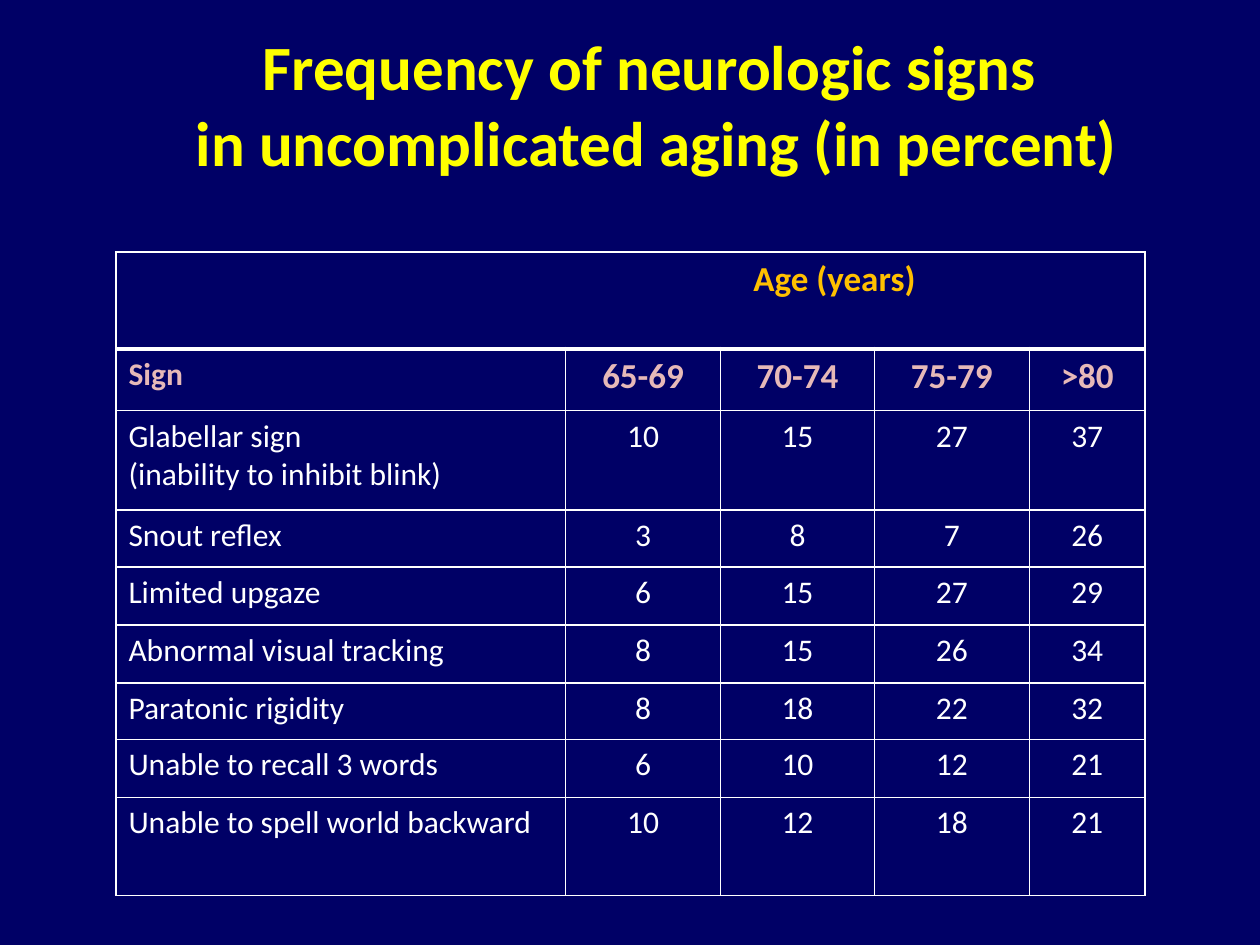
from lxml.etree import SubElement
from pptx import Presentation
from pptx.dml.color import RGBColor
from pptx.enum.text import PP_ALIGN as Align
from pptx.oxml.ns import qn
from pptx.util import Inches, Pt

NAVY = RGBColor(0x00, 0x00, 0x66)
YELLOW = RGBColor(0xFF, 0xFF, 0x00)
GOLD = RGBColor(0xFF, 0xC0, 0x00)
PINK = RGBColor(0xE6, 0xB9, 0xB8)
WHITE = RGBColor(0xFF, 0xFF, 0xFF)

TITLE = ["Frequency of neurologic signs ", "in uncomplicated aging (in percent)"]
TITLE_FORMAT = {"size": Pt(36), "bold": True, "color": YELLOW}
AGE_FORMAT = {"size": Pt(20), "bold": True, "color": GOLD}
SIGN_FORMAT = {"size": Pt(18), "bold": True, "color": PINK}
RANGE_FORMAT = {"size": Pt(20), "bold": True, "color": PINK}
BODY_FORMAT = {"size": Pt(18), "bold": False, "color": WHITE}

ROWS = [
    ["Sign", "65-69", "70-74", "75-79", ">80"],
    ["Glabellar sign\n(inability to inhibit blink)", "10", "15", "27", "37"],
    ["Snout reflex", "3", "8", "7", "26"],
    ["Limited upgaze", "6", "15", "27", "29"],
    ["Abnormal visual tracking", "8", "15", "26", "34"],
    ["Paratonic rigidity", "8", "18", "22", "32"],
    ["Unable to recall 3 words", "6", "10", "12", "21"],
    ["Unable to spell world backward", "10", "12", "18", "21"],
]
COLUMN_WIDTHS = [3.57, 1.23, 1.22, 1.23, 0.92]
ROW_HEIGHTS = [0.77, 0.49, 0.79, 0.45, 0.46, 0.46, 0.45, 0.46, 0.78]
AGE_INDENT = 4.96


def write_lines(frame, lines, formats, align):
    """Write one paragraph per line, all in the same format."""
    for index, line in enumerate(lines):
        para = frame.paragraphs[0] if index == 0 else frame.add_paragraph()
        para.alignment = align
        span = para.add_run()
        span.text = line
        span.font.name = "Calibri"
        for name, value in formats.items():
            if name == "color":
                span.font.color.rgb = value
            else:
                setattr(span.font, name, value)


def set_borders(cell, top=1, bottom=1):
    """Draw white borders; widths are in points."""
    properties = cell._tc.get_or_add_tcPr()
    widths = {"a:lnL": 1, "a:lnR": 1, "a:lnT": top, "a:lnB": bottom}
    for tag, width in widths.items():
        line = SubElement(properties, qn(tag), w=str(Pt(width)))
        fill = SubElement(line, qn("a:solidFill"))
        SubElement(fill, qn("a:srgbClr"), val=str(WHITE))


def add_title(page, left, top, width, height):
    box = page.shapes.add_textbox(left, top, width, height)
    box.text_frame.word_wrap = True
    write_lines(box.text_frame, TITLE, TITLE_FORMAT, Align.CENTER)


def add_signs_table(page, left, top, width, height):
    table = page.shapes.add_table(
        len(ROW_HEIGHTS), len(COLUMN_WIDTHS), left, top, width, height).table
    table.first_row = table.horz_banding = False
    for column, size in zip(table.columns, COLUMN_WIDTHS):
        column.width = Inches(size)
    for row, size in zip(table.rows, ROW_HEIGHTS):
        row.height = Inches(size)

    for row_index, row in enumerate(table.rows):
        for cell in row.cells:
            set_borders(cell, top=3 if row_index == 1 else 1,
                        bottom=3 if row_index == 0 else 1)
            cell.fill.background()

    heading = table.cell(0, 0)
    heading.merge(table.cell(0, len(COLUMN_WIDTHS) - 1))
    write_lines(heading.text_frame, ["Age (years)"], AGE_FORMAT, Align.LEFT)
    indent = heading.text_frame.paragraphs[0]._p.get_or_add_pPr()
    indent.set("marL", str(Inches(AGE_INDENT)))

    for row_index, texts in enumerate(ROWS, start=1):
        for column_index, text in enumerate(texts):
            is_sign = column_index == 0
            formats = BODY_FORMAT
            if row_index == 1:
                formats = SIGN_FORMAT if is_sign else RANGE_FORMAT
            write_lines(table.cell(row_index, column_index).text_frame,
                        text.split("\n"), formats,
                        Align.LEFT if is_sign else Align.CENTER)


def main():
    deck = Presentation()
    deck.slide_width, deck.slide_height = Inches(10), Inches(7.5)
    page = deck.slides.add_slide(deck.slide_layouts[6])
    page.background.fill.solid()
    page.background.fill.fore_color.rgb = NAVY
    add_title(page, Inches(0.17), Inches(0.17), Inches(10.08), Inches(1.31))
    add_signs_table(page, Inches(0.92), Inches(2),
                    Inches(sum(COLUMN_WIDTHS)), Inches(sum(ROW_HEIGHTS)))
    deck.save("out.pptx")


if __name__ == "__main__":
    main()
